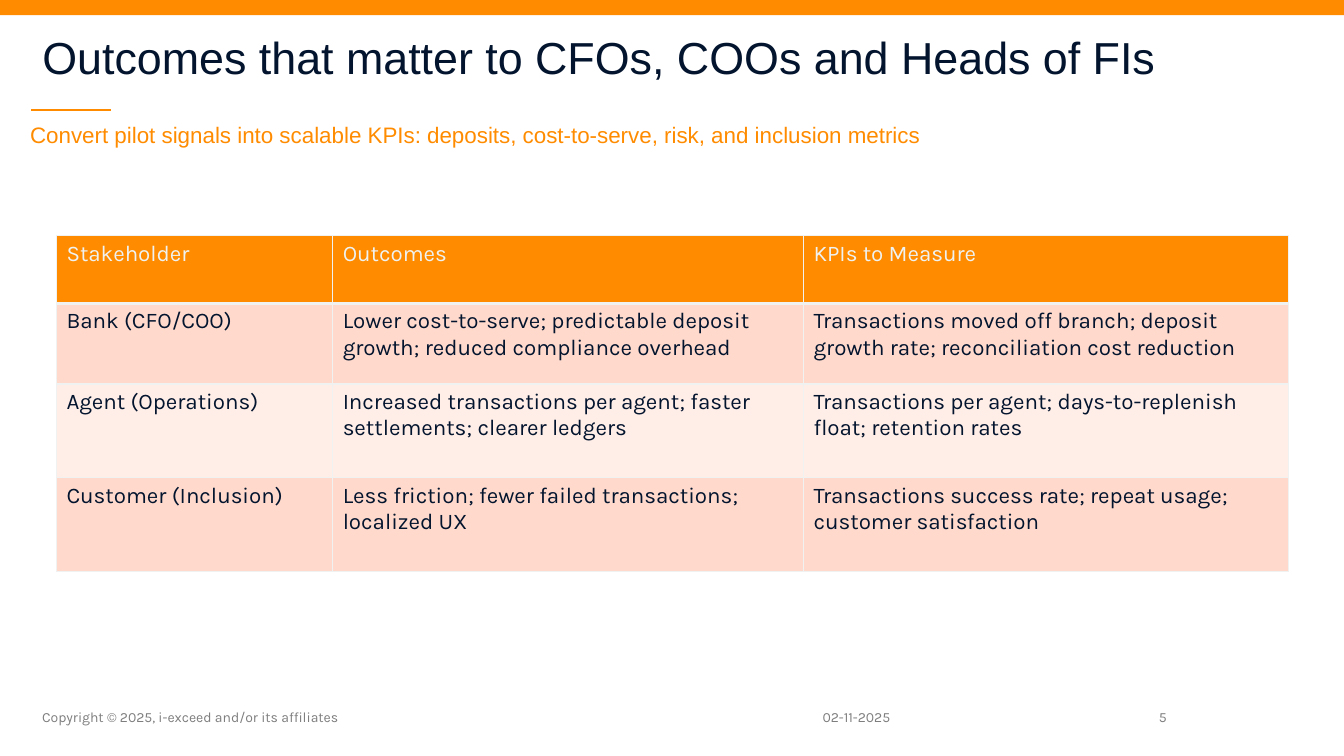
from lxml.etree import SubElement
from pptx import Presentation
from pptx.dml.color import RGBColor
from pptx.enum.shapes import MSO_CONNECTOR, MSO_SHAPE
from pptx.enum.text import MSO_ANCHOR, MSO_AUTO_SIZE, PP_ALIGN
from pptx.oxml.ns import qn
from pptx.util import Inches, Pt

ORANGE = RGBColor(0xFF, 0x8C, 0x00)
NAVY = RGBColor(0x03, 0x14, 0x2E)
GREY = RGBColor(0x7E, 0x7E, 0x7E)
PALE = RGBColor(0xEF, 0xF2, 0xF1)
PEACH = RGBColor(0xFF, 0xDA, 0xCC)
BLUSH = RGBColor(0xFF, 0xEE, 0xE7)

HEADING_FONT = "Arial"
BODY_FONT = "Karla"

COLUMN_WIDTHS = [2.74, 4.67, 4.81]
ROW_HEIGHTS = [0.67, 0.8, 0.93, 0.93]
OUTCOMES = [
    ["Stakeholder", "Outcomes", "KPIs to Measure"],
    ["Bank (CFO/COO)",
     "Lower cost-to-serve; predictable deposit growth; reduced compliance overhead",
     "Transactions moved off branch; deposit growth rate; reconciliation cost reduction"],
    ["Agent (Operations)",
     "Increased transactions per agent; faster settlements; clearer ledgers",
     "Transactions per agent; days-to-replenish float; retention rates"],
    ["Customer (Inclusion)",
     "Less friction; fewer failed transactions; localized UX",
     "Transactions success rate; repeat usage; customer satisfaction"],
]


def write(frame, text, size, font, color, align=PP_ALIGN.LEFT):
    para = frame.paragraphs[0]
    para.alignment = align
    span = para.add_run()
    span.text = text
    span.font.size = Pt(size)
    span.font.name = font
    span.font.bold = False
    span.font.color.rgb = color
    return para


def add_top_bar(page, width):
    bar = page.shapes.add_shape(MSO_SHAPE.RECTANGLE, 0, 0, width, Inches(0.15))
    bar.shadow.inherit = False
    bar.fill.solid()
    bar.fill.fore_color.rgb = ORANGE
    bar.line.fill.background()


def add_title_rule(page):
    rule = page.shapes.add_connector(
        MSO_CONNECTOR.STRAIGHT, Inches(0.31), Inches(1.09), Inches(1.1), Inches(1.09))
    rule.line.color.rgb = ORANGE
    rule.line.width = Pt(1.5)
    SubElement(rule._element.spPr, qn("a:effectLst"))


def set_title(page, text):
    title = page.shapes.title
    title.left, title.top = Inches(0.32), Inches(0.15)
    title.width, title.height = Inches(12.7), Inches(0.74)
    frame = title.text_frame
    frame.auto_size = MSO_AUTO_SIZE.NONE
    frame.vertical_anchor = MSO_ANCHOR.BOTTOM
    para = write(frame, text, 32, HEADING_FONT, NAVY)
    para.line_spacing = 0.9


def add_text_frame(page, left, top, width, height):
    box = page.shapes.add_textbox(Inches(left), Inches(top), Inches(width), Inches(height))
    box.text_frame.word_wrap = True
    return box.text_frame


def add_subtitle(page, text):
    frame = add_text_frame(page, 0.2, 1.15, 12.81, 0.37)
    frame.auto_size = MSO_AUTO_SIZE.SHAPE_TO_FIT_TEXT
    write(frame, text, 16, HEADING_FONT, ORANGE)


def add_footer(page, left, width, text, align=PP_ALIGN.LEFT):
    frame = add_text_frame(page, left, 6.85, width, 0.4)
    frame.vertical_anchor = MSO_ANCHOR.BOTTOM
    write(frame, text, 10, BODY_FONT, GREY, align)


def set_border(cell, side, points):
    border = SubElement(cell._tc.get_or_add_tcPr(), qn(f"a:ln{side}"), w=str(Pt(points)))
    fill = SubElement(border, qn("a:solidFill"))
    SubElement(fill, qn("a:srgbClr"), val=str(PALE))


def format_cell(cell, row, text):
    heavy_side = {0: "B", 1: "T"}.get(row)
    for side in "LRTB":
        set_border(cell, side, 3 if side == heavy_side else 1)
    cell.fill.solid()
    cell.fill.fore_color.rgb = ORANGE if row == 0 else PEACH if row % 2 else BLUSH
    write(cell.text_frame, text, 16, BODY_FONT, PALE if row == 0 else NAVY)


def add_outcomes_table(page):
    table = page.shapes.add_table(
        len(ROW_HEIGHTS), len(COLUMN_WIDTHS), Inches(0.56), Inches(2.34),
        Inches(sum(COLUMN_WIDTHS)), Inches(sum(ROW_HEIGHTS))).table
    for column, width in zip(table.columns, COLUMN_WIDTHS):
        column.width = Inches(width)
    for row, height in zip(table.rows, ROW_HEIGHTS):
        row.height = Inches(height)
    for row, texts in enumerate(OUTCOMES):
        for column, text in enumerate(texts):
            format_cell(table.cell(row, column), row, text)


def main():
    deck = Presentation()
    deck.slide_width, deck.slide_height = Inches(13.33), Inches(7.5)
    page = deck.slides.add_slide(deck.slide_layouts.get_by_name("Title Only"))
    add_top_bar(page, deck.slide_width)
    add_title_rule(page)
    set_title(page, "Outcomes that matter to CFOs, COOs and Heads of FIs")
    add_subtitle(page, "Convert pilot signals into scalable KPIs: deposits, "
                       "cost-to-serve, risk, and inclusion metrics")
    add_outcomes_table(page)
    add_footer(page, 0.32, 6.84, "Copyright © 2025, i-exceed and/or its affiliates")
    add_footer(page, 8.06, 1.68, "02-11-2025")
    add_footer(page, 10.65, 1.02, "5", PP_ALIGN.RIGHT)
    deck.save("out.pptx")


if __name__ == "__main__":
    main()
